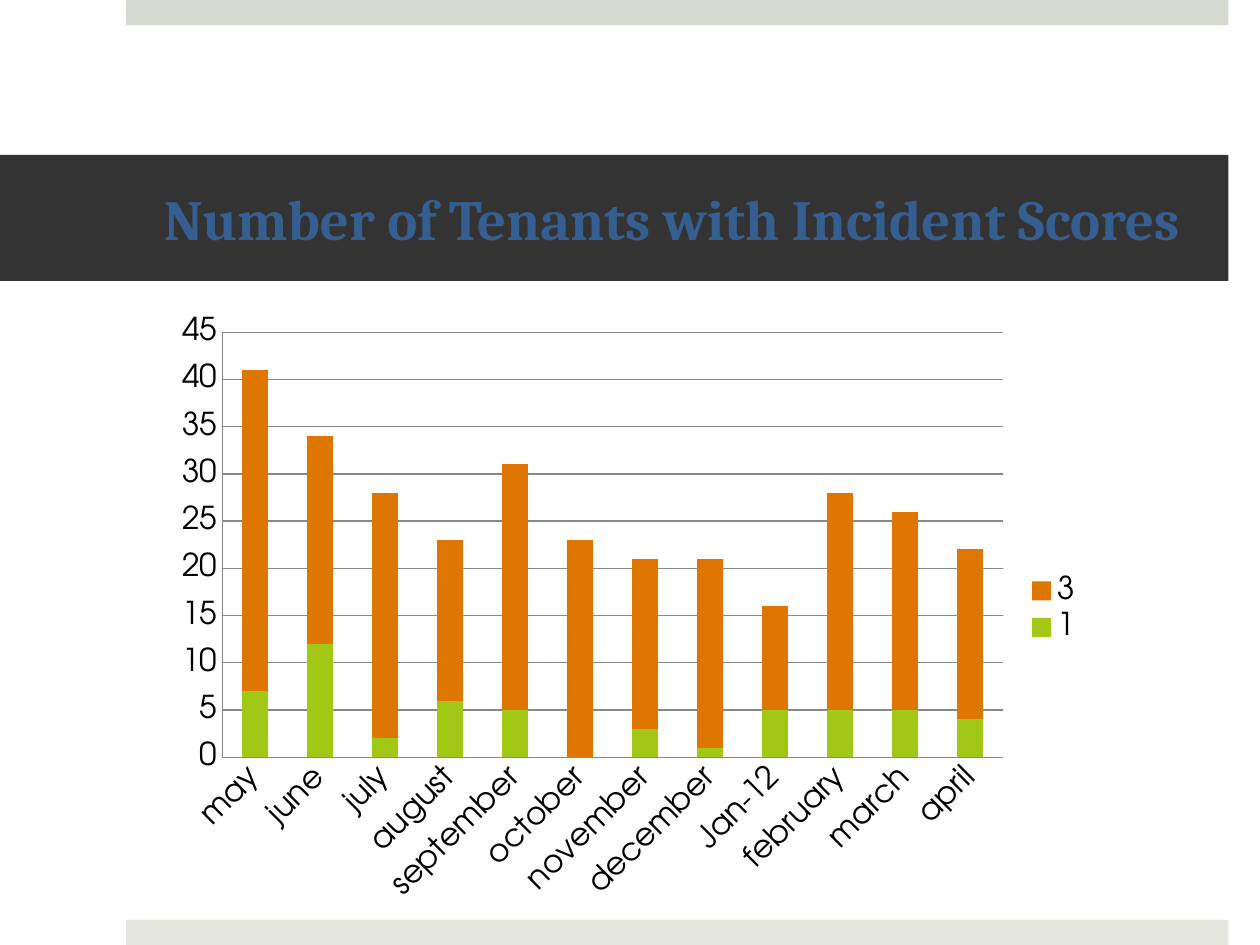
import pptx
import pptx.chart.data
import pptx.dml.color
import pptx.enum.chart
import pptx.enum.shapes
import pptx.enum.text
import pptx.util

Inches = pptx.util.Inches
Pt = pptx.util.Pt
RGBColor = pptx.dml.color.RGBColor

SAGE = RGBColor(0xD6, 0xD9, 0xCD)
PALE = RGBColor(0xE4, 0xE6, 0xDE)
DARK = RGBColor(0x33, 0x33, 0x33)
BLUE = RGBColor(0x36, 0x5F, 0x91)
GREEN = RGBColor(0xA2, 0xC8, 0x16)
ORANGE = RGBColor(0xE0, 0x76, 0x02)
GREY = RGBColor(0x88, 0x88, 0x88)
BLACK = RGBColor(0, 0, 0)

MONTHS = ["may", "june", "july", "august", "september", "october",
          "november", "december", "Jan-12", "february", "march", "april"]
SCORES = [
    ("1", GREEN, [7, 12, 2, 6, 5, 0, 3, 1, 5, 5, 5, 4]),
    ("3", ORANGE, [34, 22, 26, 17, 26, 23, 18, 20, 11, 23, 21, 18]),
]


class Painter:
    head_font = "Cambria"
    body_font = "TeX Gyre Adventor"

    def __init__(self, slide):
        self.slide = slide

    def band(self, left, top, width, height, color):
        shape = self.slide.shapes.add_shape(
            pptx.enum.shapes.MSO_SHAPE.RECTANGLE,
            Inches(left), Inches(top), Inches(width), Inches(height))
        shape.shadow.inherit = False
        shape.fill.solid()
        shape.fill.fore_color.rgb = color
        shape.line.fill.background()
        return shape

    def title(self, text, left, top, width, height):
        frame = self.band(left, top, width, height, DARK).text_frame
        frame.word_wrap = True
        frame.vertical_anchor = pptx.enum.text.MSO_ANCHOR.MIDDLE
        frame.margin_left = Inches(1.3)
        frame.margin_right = Inches(0.3)
        para = frame.paragraphs[0]
        para.text = text
        para.alignment = pptx.enum.text.PP_ALIGN.LEFT
        para.font.name = self.head_font
        para.font.size = Pt(32.4)
        para.font.bold = True
        para.font.color.rgb = BLUE

    def chart(self, cats, rows, left, top, width, height):
        data = pptx.chart.data.CategoryChartData()
        data.categories = cats
        for name, _, vals in rows:
            data.add_series(name, vals)
        chart = self.slide.shapes.add_chart(
            pptx.enum.chart.XL_CHART_TYPE.COLUMN_STACKED,
            Inches(left), Inches(top), Inches(width), Inches(height),
            data).chart
        chart.has_title = False
        chart.font.name = self.body_font
        chart.font.size = Pt(18)
        chart.font.color.rgb = BLACK
        chart.has_legend = True
        chart.legend.position = pptx.enum.chart.XL_LEGEND_POSITION.RIGHT
        chart.legend.include_in_layout = False
        plot = chart.plots[0]
        plot.gap_width = 150
        plot.overlap = 100
        plot.vary_by_categories = False
        for series, (_, color, _) in zip(plot.series, rows):
            series.format.fill.solid()
            series.format.fill.fore_color.rgb = color
        for axis in (chart.category_axis, chart.value_axis):
            axis.major_tick_mark = pptx.enum.chart.XL_TICK_MARK.NONE
            axis.minor_tick_mark = pptx.enum.chart.XL_TICK_MARK.NONE
            axis.format.line.color.rgb = GREY
        scale = chart.value_axis
        scale.minimum_scale = 0
        scale.maximum_scale = 45
        scale.major_unit = 5
        scale.has_major_gridlines = True
        scale.major_gridlines.format.line.color.rgb = GREY


def main():
    deck = pptx.Presentation()
    deck.slide_width = Inches(10)
    deck.slide_height = Inches(7.5)
    pen = Painter(deck.slides.add_slide(deck.slide_layouts[6]))
    pen.band(1, 0, 8.75, 0.2, SAGE)
    pen.band(1, 7.3, 8.75, 0.2, PALE)
    pen.title("Number of Tenants with Incident Scores", 0, 1.23, 9.75, 1)
    pen.chart(MONTHS, SCORES, 1.3, 2.42, 7.4, 4.83)
    deck.save("out.pptx")


if __name__ == "__main__":
    main()
